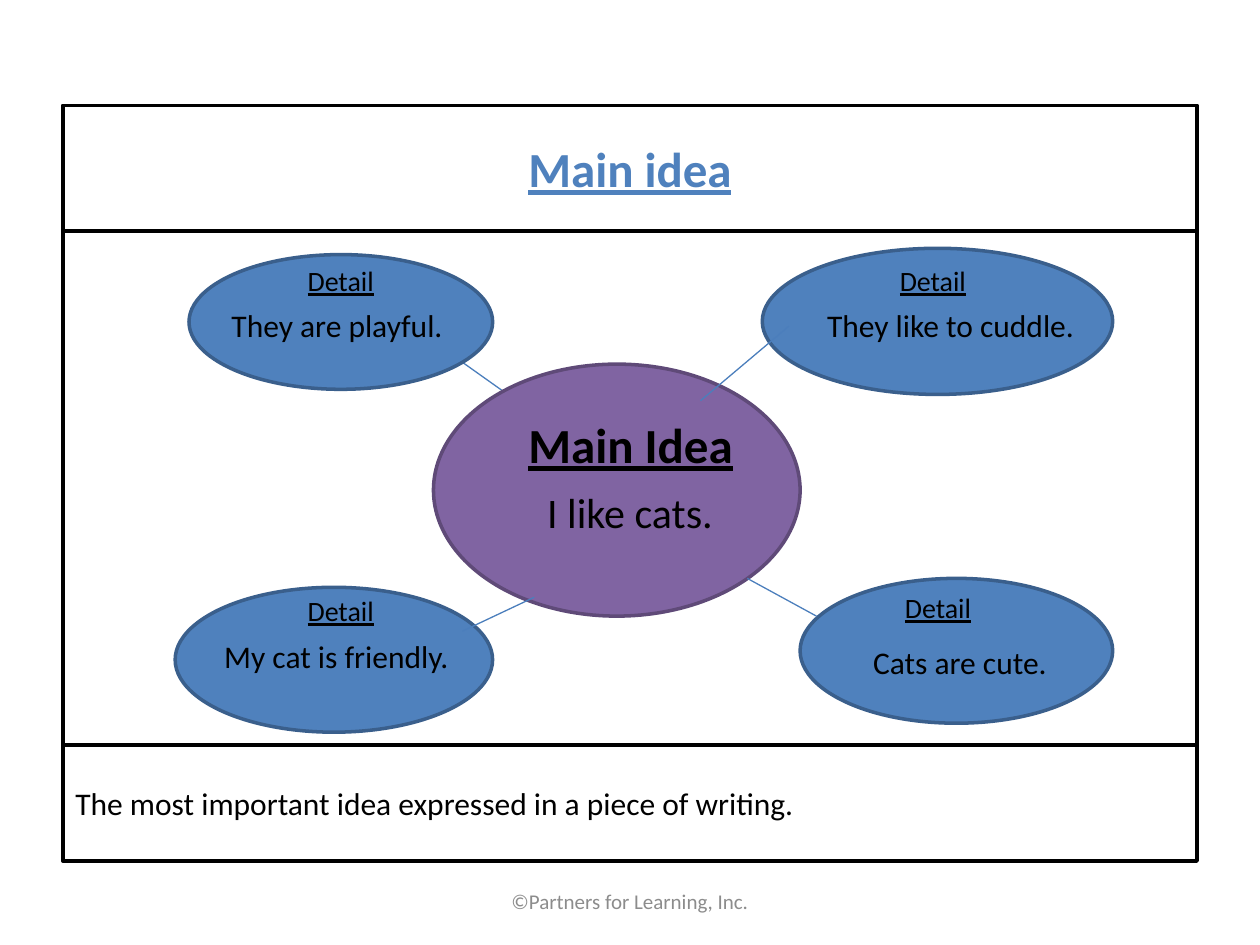
from lxml import etree
from pptx import Presentation
from pptx.dml.color import RGBColor
from pptx.enum.shapes import MSO_CONNECTOR, MSO_SHAPE
from pptx.enum.text import MSO_ANCHOR, PP_ALIGN
from pptx.oxml.ns import qn
from pptx.util import Pt

RECT, OVAL = MSO_SHAPE.RECTANGLE, MSO_SHAPE.OVAL
STRAIGHT = MSO_CONNECTOR.STRAIGHT
TOP, MIDDLE = MSO_ANCHOR.TOP, MSO_ANCHOR.MIDDLE
LEFT, CENTER = PP_ALIGN.LEFT, PP_ALIGN.CENTER

BLACK = RGBColor(0x00, 0x00, 0x00)
GRAY = RGBColor(0x8C, 0x8C, 0x8C)
BLUE = RGBColor(0x4F, 0x81, 0xBD)
NAVY = RGBColor(0x3A, 0x5F, 0x8C)
LINK = RGBColor(0x4B, 0x7E, 0xBC)
PURPLE = RGBColor(0x80, 0x64, 0xA2)
PLUM = RGBColor(0x5F, 0x4A, 0x78)

# Oval box, label corner, statement, its box and alignment
DETAILS = [
    ((421.2, 198.7, 178.6, 82.8), (450.7, 202.3),
     "Cats are cute.", (455.8, 231.8, 113.8, 29.5), LEFT),
    ((399.6, 10.1, 200.2, 83.5), (447.8, 15.1),
     "They like to cuddle.", (414.7, 39.6, 185, 28.8), CENTER),
    ((64.1, 203.8, 181.4, 82.8), (109.4, 203.8),
     "My cat is friendly.", (72, 228.9, 168.5, 28.8), CENTER),
    ((72, 13.7, 173.5, 77), (109.4, 15.1),
     "They are playful. ", (77, 39.6, 163.4, 28.8), CENTER),
]
BACK_LINK = (269.3, 104.4, 209.5, 61.9)
FRONT_LINKS = [
    (364.3, 97.2, 414.7, 54.7),
    (391, 198.7, 430.6, 220.3),
    (269.3, 209.5, 228.2, 228.9),
]


def shift(box, part):
    """Turn a part's box, relative to the region, into slide lengths."""
    x, y, w, h = part
    return Pt(box[0] + x), Pt(box[1] + y), Pt(w), Pt(h)


def write(shape, text, size, color=BLACK, align=CENTER, anchor=TOP,
          bold=False, under=False):
    frame = shape.text_frame
    frame.word_wrap = True
    frame.vertical_anchor = anchor
    para = frame.paragraphs[0]
    para.text = text
    para.alignment = align
    font = para.font
    font.name, font.size, font.color.rgb = "Calibri", Pt(size), color
    font.bold, font.underline = bold, under


def add_text(slide, box, part, text, size, **style):
    write(slide.shapes.add_textbox(*shift(box, part)), text, size, **style)


def add_form(slide, kind, box, part, fill, line, width):
    form = slide.shapes.add_shape(kind, *shift(box, part))
    form.shadow.inherit = False
    if fill is None:
        form.fill.background()
    else:
        form.fill.solid()
        form.fill.fore_color.rgb = fill
    form.line.color.rgb = line
    form.line.width = Pt(width)
    return form


def add_panel(slide, box):
    return add_form(slide, RECT, box, (0, 0, *box[2:]), None, BLACK, 2.25)


def add_link(slide, box, ends):
    x1, y1, x2, y2 = ends
    left, top = box[:2]
    link = slide.shapes.add_connector(
        STRAIGHT, Pt(left + x1), Pt(top + y1), Pt(left + x2), Pt(top + y2))
    link.line.color.rgb = LINK
    link.line.width = Pt(0.75)
    etree.SubElement(link._element.spPr, qn("a:effectLst"))


def add_header(slide, box):
    write(add_panel(slide, box), "Main idea", 28, BLUE,
          anchor=MIDDLE, bold=True, under=True)


def add_web(slide, box):
    """Draw the main idea with its four details around it."""
    add_panel(slide, box)
    add_link(slide, box, BACK_LINK)
    for oval, *_ in DETAILS:
        add_form(slide, OVAL, box, oval, BLUE, NAVY, 2)
    add_form(slide, OVAL, box, (211.7, 76.3, 209.5, 144), PURPLE, PLUM, 2)
    for ends in FRONT_LINKS:
        add_link(slide, box, ends)
    add_text(slide, box, (228.2, 101.5, 192.2, 41), "Main Idea", 28,
             bold=True, under=True)
    add_text(slide, box, (238.3, 142.5, 171.4, 36), "I like cats.", 24)
    for _, corner, text, part, align in DETAILS:
        add_text(slide, box, (*corner, 98.6, 26.6), "Detail", 16, under=True)
        add_text(slide, box, part, text, 18, align=align)


def add_meaning(slide, box):
    write(add_panel(slide, box),
          "The most important idea expressed in a piece of writing.", 18,
          align=LEFT, anchor=MIDDLE)


def add_footer(slide, box):
    add_text(slide, box, (0, 0, *box[2:]), "©Partners for Learning, Inc.",
             12, color=GRAY, anchor=MIDDLE)


def main():
    deck = Presentation()
    deck.slide_width, deck.slide_height = Pt(720), Pt(540)
    slide = deck.slides.add_slide(deck.slide_layouts[6])
    add_header(slide, (36, 60.3, 648, 71.5))
    add_web(slide, (36, 131.8, 648, 294.2))
    add_meaning(slide, (36, 426, 648, 66))
    add_footer(slide, (246, 500.5, 228, 28.75))
    deck.save("out.pptx")


if __name__ == "__main__":
    main()
